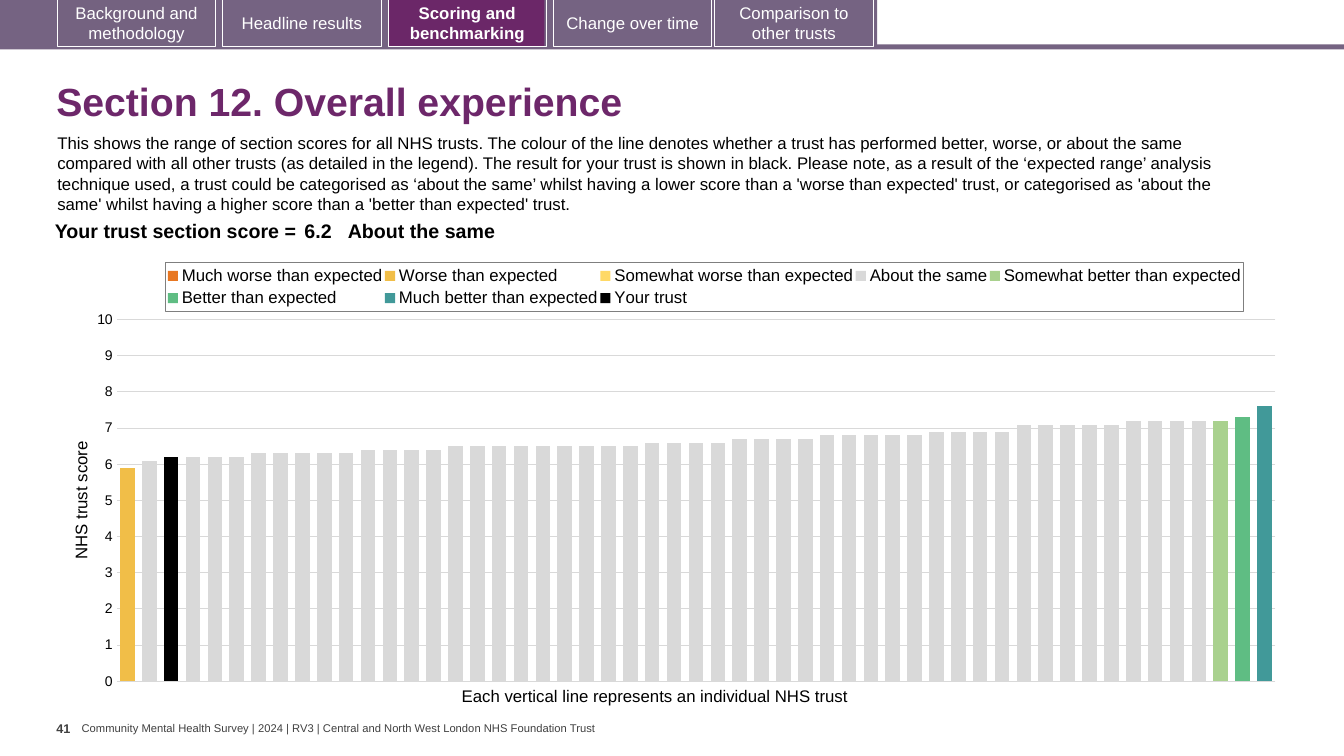
"""Build the overall experience slide with its tabs, score line and benchmark chart."""
from copy import deepcopy
from typing import NamedTuple, Optional

from pptx import Presentation
from pptx.chart.axis import ValueAxis
from pptx.chart.data import CategoryChartData
from pptx.dml.color import RGBColor
from pptx.enum.chart import XL_CHART_TYPE, XL_LEGEND_POSITION, XL_TICK_LABEL_POSITION, XL_TICK_MARK
from pptx.enum.shapes import MSO_SHAPE
from pptx.enum.text import MSO_ANCHOR, PP_ALIGN
from pptx.oxml import parse_xml
from pptx.oxml.ns import nsdecls
from pptx.util import Inches, Pt

RECTANGLE = MSO_SHAPE.RECTANGLE
COLUMNS = XL_CHART_TYPE.COLUMN_CLUSTERED
LEGEND_TOP = XL_LEGEND_POSITION.TOP
NO_LABELS = XL_TICK_LABEL_POSITION.NONE
NO_TICK, OUTER_TICK = XL_TICK_MARK.NONE, XL_TICK_MARK.OUTSIDE
TOP, MIDDLE = MSO_ANCHOR.TOP, MSO_ANCHOR.MIDDLE
LEFT, CENTER, RIGHT = PP_ALIGN.LEFT, PP_ALIGN.CENTER, PP_ALIGN.RIGHT

MAUVE, SLATE, PLUM = "756382", "746280", "6B2768"
BLACK, WHITE, GREY = "000000", "FFFFFF", "404040"
TRUST_COUNT = 53
SAME_SCORES = [
    score
    for score, count in (
        (6.1, 1), (6.2, 4), (6.3, 5), (6.4, 4), (6.5, 9), (6.6, 4),
        (6.7, 4), (6.8, 5), (6.9, 4), (7.1, 5), (7.2, 4),
    )
    for _ in range(count)
]


class Bar(NamedTuple):
    left: float
    top: float
    width: float
    height: float
    fill: str


class Tab(NamedTuple):
    left: float
    label: str
    fill: Optional[str] = None
    bold: bool = False


class Note(NamedTuple):
    left: float
    top: float
    width: float
    height: float
    text: str
    size: float
    color: str = BLACK
    bold: bool = False
    anchor: MSO_ANCHOR = TOP
    wrap: bool = True
    side_inset: float = 0.1
    line_spacing: float = 1.0


class Band(NamedTuple):
    name: str
    color: str
    start: int
    scores: list


class ScoreCell(NamedTuple):
    text: str
    width: float
    align: PP_ALIGN
    side_inset: float


BARS = [
    Bar(0, 0.44, 13.33, 0.05, MAUVE),
    Bar(0, 0, 8.7, 0.47, MAUVE),
    Bar(0.59, 0, 1.54, 0.46, SLATE),
    Bar(3.86, 0, 1.54, 0.46, PLUM),
]
TABS = [
    Tab(0.57, "Background and methodology", SLATE),
    Tab(2.21, "Headline results"),
    Tab(3.85, "Scoring and benchmarking", bold=True),
    Tab(5.49, "Change over time", MAUVE),
    Tab(7.09, "Comparison to other trusts", MAUVE),
]
NOTES = [
    Note(0.81, 7.16, 5.17, 0.13, "Community Mental Health Survey | 2024 | RV3 | Central and North West "
         "London NHS Foundation Trust", 8, GREY, anchor=MIDDLE, wrap=False, side_inset=0),
    Note(0.46, 0.67, 12.49, 0.72, "Section 12. Overall experience", 28, "6D276A", True, MIDDLE,
         line_spacing=0.9),
    Note(0.56, 7.1, 0.25, 0.4, "41", 9, GREY, True, wrap=False, side_inset=0),
    Note(0.47, 1.27, 12.13, 0.91, "This shows the range of section scores for all NHS trusts. The colour of "
         "the line denotes whether a trust has performed better, worse, or about the same compared with all "
         "other trusts (as detailed in the legend). The result for your trust is shown in black. Please note, "
         "as a result of the ‘expected range’ analysis technique used, a trust could be categorised as ‘about "
         "the same’ whilst having a lower score than a 'worse than expected' trust, or categorised as 'about "
         "the same' whilst having a higher score than a 'better than expected' trust.", 12),
    Note(4.48, 6.75, 4.11, 0.3, "Each vertical line represents an individual NHS trust", 12, wrap=False),
]
BANDS = [
    Band("Much worse than expected", "E87722", 0, []),
    Band("Worse than expected", "F1BE48", 0, [5.9]),
    Band("Somewhat worse than expected", "FFD966", 0, []),
    Band("About the same", "D9D9D9", 1, SAME_SCORES),
    Band("Somewhat better than expected", "A9D18E", 50, [7.2]),
    Band("Better than expected", "5FBD83", 51, [7.3]),
    Band("Much better than expected", "419999", 52, [7.6]),
    Band("Your trust", BLACK, 2, [6.2]),
]
SCORE_CELLS = [
    ScoreCell("Your trust section score =", 2.63, RIGHT, 0.04),
    ScoreCell("6.2", 0.47, LEFT, 0.04),
    ScoreCell("About the same", 8.59, LEFT, 0),
]


def rgb(value: str) -> RGBColor:
    return RGBColor.from_string(value)


def style_font(font, size: float, color: str, bold: bool = False) -> None:
    font.name, font.size, font.bold = "Arial", Pt(size), bold
    font.color.rgb = rgb(color)


def add_rectangle(page, left: float, top: float, width: float, height: float, fill: Optional[str]):
    box = page.shapes.add_shape(RECTANGLE, Inches(left), Inches(top), Inches(width), Inches(height))
    box.shadow.inherit = False
    box.line.fill.background()
    if fill:
        box.fill.solid()
        box.fill.fore_color.rgb = rgb(fill)
    else:
        box.fill.background()
    return box


def add_tab(page, tab: Tab) -> None:
    box = add_rectangle(page, tab.left, -0.01, 1.57, 0.47, tab.fill)
    box.line.color.rgb = rgb(WHITE)
    box.line.width = Pt(0.75)
    frame = box.text_frame
    frame.text, frame.word_wrap, frame.vertical_anchor = tab.label, True, MIDDLE
    frame.paragraphs[0].alignment = CENTER
    style_font(frame.paragraphs[0].runs[0].font, 12, WHITE, tab.bold)


def add_note(page, note: Note) -> None:
    box = page.shapes.add_textbox(Inches(note.left), Inches(note.top), Inches(note.width), Inches(note.height))
    frame = box.text_frame
    frame.text, frame.word_wrap, frame.vertical_anchor = note.text, note.wrap, note.anchor
    frame.margin_left = frame.margin_right = Inches(note.side_inset)
    if note.height < 0.2:
        frame.margin_top = frame.margin_bottom = 0
    frame.paragraphs[0].line_spacing = note.line_spacing
    style_font(frame.paragraphs[0].runs[0].font, note.size, note.color, note.bold)


def add_score_table(page) -> None:
    table = page.shapes.add_table(1, 3, Inches(0.35), Inches(2.15), Inches(11.69), Inches(0.31)).table
    table.first_row = table.horz_banding = False
    for column, cell, score in zip(table.columns, table.rows[0].cells, SCORE_CELLS):
        column.width = Inches(score.width)
        cell.fill.background()
        cell.text = score.text
        cell.margin_left = cell.margin_right = Inches(score.side_inset)
        cell.margin_top = cell.margin_bottom = Inches(0.04)
        paragraph = cell.text_frame.paragraphs[0]
        paragraph.alignment = score.align
        style_font(paragraph.runs[0].font, 14, BLACK, True)


def set_layout(parent, index: int, x: float, y: float, w: float, h: float, target: str = "") -> None:
    for layout in parent.xpath("./c:layout"):
        parent.remove(layout)
    sizes = "".join(f'<c:{key} val="{size}"/>' for key, size in zip("xywh", (x, y, w, h)))
    modes = '<c:xMode val="edge"/><c:yMode val="edge"/>'
    parent.insert(index, parse_xml(
        f'<c:layout {nsdecls("c")}><c:manualLayout>{target}{modes}{sizes}</c:manualLayout></c:layout>'))


def move_last_band_to_right_axis(chart) -> None:
    bars = chart.plots[0]._element
    right_bars = deepcopy(bars)
    category, value = chart.category_axis._element, chart.value_axis._element
    right_category, right_value = deepcopy(category), deepcopy(value)
    bars.remove(bars.xpath("./c:ser")[-1])
    for series in right_bars.xpath("./c:ser")[:-1]:
        right_bars.remove(series)
    ids = {node.get("val"): str(1001 + n) for n, node in enumerate(bars.xpath("./c:axId"))}
    for part in (right_bars, right_category, right_value):
        for node in part.xpath("./c:axId | ./c:crossAx"):
            node.set("val", ids[node.get("val")])
    right_value.xpath("./c:axPos")[0].set("val", "r")
    right_value.xpath("./c:crosses")[0].set("val", "max")
    axis = ValueAxis(right_value)
    axis.has_major_gridlines = axis.has_title = False
    axis.tick_label_position, axis.major_tick_mark = NO_LABELS, OUTER_TICK
    bars.addnext(right_bars)
    value.addnext(right_value)
    right_value.addnext(right_category)


def add_score_chart(page) -> None:
    data = CategoryChartData()
    data.categories = [str(number) for number in range(1, TRUST_COUNT + 1)]
    for band in BANDS:
        tail = TRUST_COUNT - band.start - len(band.scores)
        data.add_series(band.name, [None] * band.start + band.scores + [None] * tail)
    chart = page.shapes.add_chart(COLUMNS, Inches(0.67), Inches(2.47), Inches(12.15), Inches(4.44), data).chart
    chart.has_title = False
    chart.font.name, chart.font.size = "Calibri", Pt(10)
    chart.font.color.rgb = rgb(BLACK)
    plot = chart.plots[0]
    plot.gap_width, plot.overlap, plot.vary_by_categories = 50, 100, False
    for series, band in zip(plot.series, BANDS):
        series.invert_if_negative = False
        series.format.fill.solid()
        series.format.fill.fore_color.rgb = rgb(band.color)
    chart.category_axis.visible = False
    axis = chart.value_axis
    axis.minimum_scale, axis.maximum_scale, axis.major_unit = 0, 10, 1
    axis.major_tick_mark = axis.minor_tick_mark = NO_TICK
    axis.format.line.fill.background()
    axis.major_gridlines.format.line.color.rgb = rgb("D9D9D9")
    axis.major_gridlines.format.line.width = Pt(0.75)
    axis.tick_labels.number_format, axis.tick_labels.number_format_is_linked = "0", False
    style_font(axis.tick_labels.font, 10, BLACK)
    axis.axis_title.text_frame.text = "NHS trust score"
    style_font(axis.axis_title.text_frame.paragraphs[0].runs[0].font, 12, BLACK)
    chart.has_legend = True
    legend = chart.legend
    legend.position, legend.include_in_layout = LEGEND_TOP, False
    style_font(legend.font, 12, BLACK)
    set_layout(legend._element, 1, 0.08, 0.03, 0.88, 0.11)
    legend._element.xpath("./c:txPr")[0].addprevious(parse_xml(
        f'<c:spPr {nsdecls("c", "a")}><a:ln w="9525"><a:solidFill><a:srgbClr val="7F7F7F"/>'
        "</a:solidFill></a:ln></c:spPr>"))
    set_layout(plot._element.getparent(), 0, 0.04, 0.158, 0.946, 0.808, '<c:layoutTarget val="inner"/>')
    move_last_band_to_right_axis(chart)


def main() -> None:
    deck = Presentation()
    deck.slide_width, deck.slide_height = Inches(13.33), Inches(7.5)
    page = deck.slides.add_slide(deck.slide_layouts[6])
    for bar in BARS:
        add_rectangle(page, *bar)
    for tab in TABS:
        add_tab(page, tab)
    for note in NOTES:
        add_note(page, note)
    add_score_chart(page)
    add_score_table(page)
    deck.save("out.pptx")


if __name__ == "__main__":
    main()
